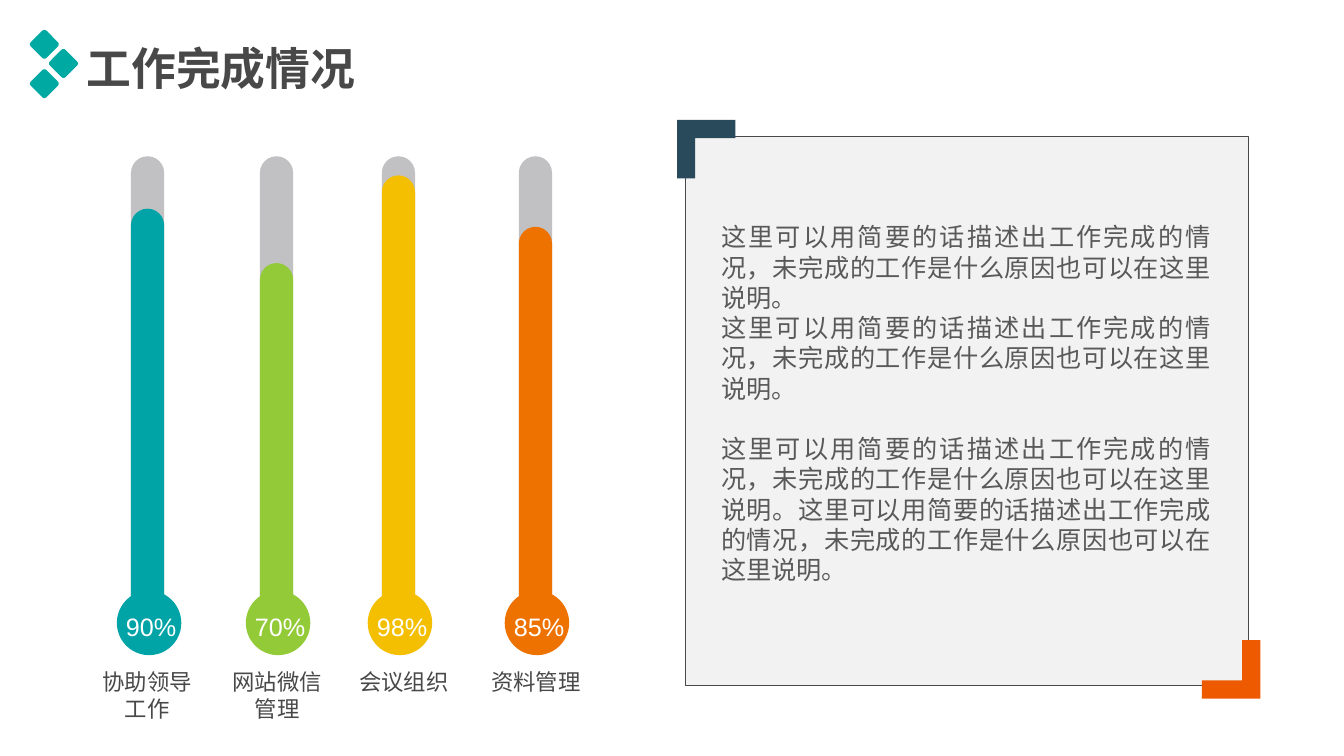
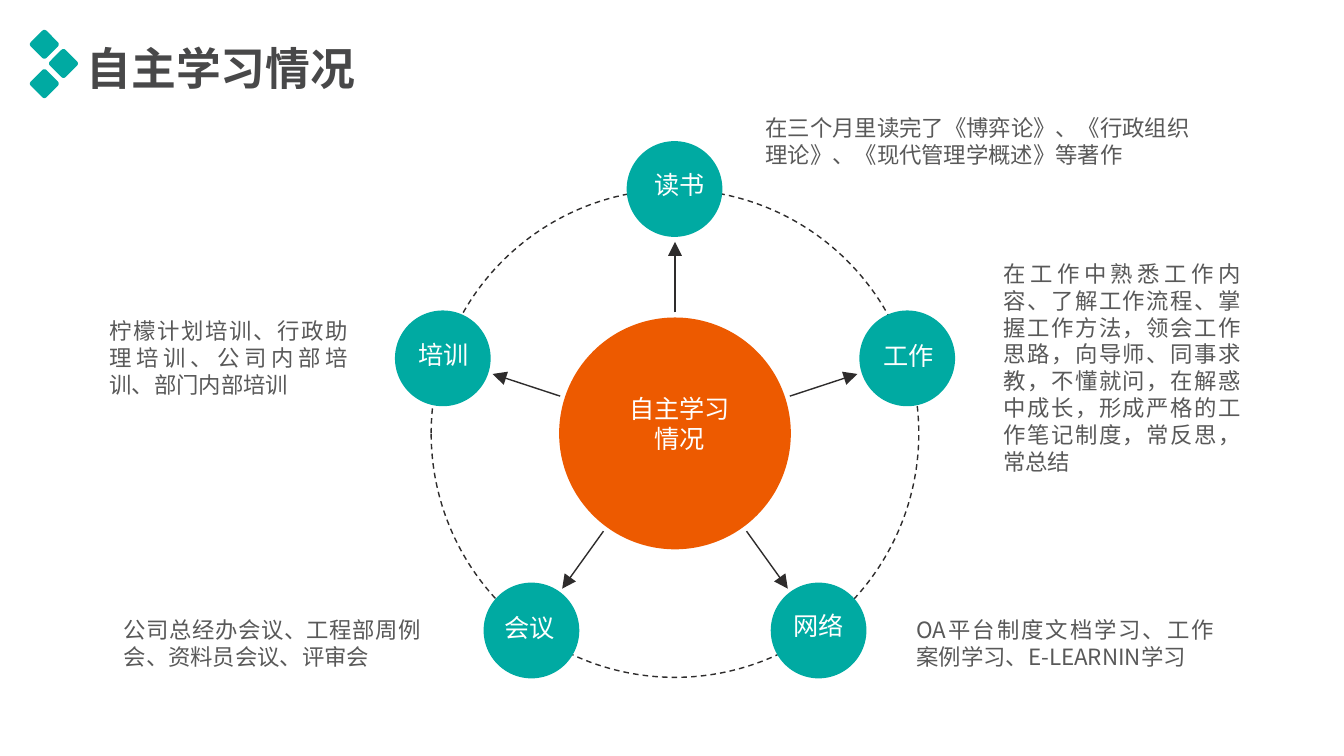
import math

from lxml import etree
from pptx import Presentation
from pptx import util as u
from pptx.dml.color import RGBColor
from pptx.enum import dml, shapes, text
from pptx.oxml.ns import qn

PX = 9144  # 100 px to the inch
FONT = "Noto Sans CJK SC"
C = {
    "teal": "00AAA2", "orange": "ED5A00", "navy": "294A5A", "dark": "484849",
    "body": "595959", "line": "2E2C2C", "panel": "F2F2F2", "tube": "C1C0C3",
    "white": "FFFFFF", "aqua": "00A3A6", "green": "93CA38",
    "yellow": "F4BF00", "amber": "ED7200",
}
KIND = shapes.MSO_SHAPE
ALIGN = text.PP_ALIGN


def put(s, kind, x, y, w, h, fill=None, line=None, width=1):
    """Add a preset shape, or a text box when kind is None."""
    box = [round(v) * PX for v in (x, y, w, h)]
    if kind is None:
        return s.shapes.add_textbox(*box)
    sp = s.shapes.add_shape(kind, *box)
    sp.shadow.inherit = False
    if fill:
        sp.fill.solid()
        sp.fill.fore_color.rgb = RGBColor.from_string(C[fill])
    else:
        sp.fill.background()
    if line:
        sp.line.color.rgb = RGBColor.from_string(C[line])
        sp.line.width = u.Pt(width)
    else:
        sp.line.fill.background()
    return sp


def write(sp, content, size, color, align, bold=False, font=FONT):
    """Fill a shape with one paragraph per line of content."""
    tf = sp.text_frame
    tf.word_wrap = True
    tf.vertical_anchor = text.MSO_ANCHOR.TOP
    tf.text = content
    for p in tf.paragraphs:
        p.alignment = align
        p.font.name = font
        p.font.size = u.Pt(size)
        p.font.bold = bold
        p.font.color.rgb = RGBColor.from_string(C[color])
        # Punctuation stays inside the right margin
        p._p.pPr.set("hangingPunct", "0")
        props = p._p.pPr.find(qn("a:defRPr"))
        props.find(qn("a:latin")).addnext(
            etree.Element(qn("a:ea"), typeface=font))
    return tf


prs = Presentation()
prs.slide_width, prs.slide_height = 1334 * PX, 750 * PX

# Shared title and diamond mark
slides = []
for title in ("工作完成情况", "自主学习情况"):
    s = prs.slides.add_slide(prs.slide_layouts[5])
    sp = s.shapes.title
    sp.left, sp.top, sp.width, sp.height = (v * PX for v in (76, 35, 654, 63))
    write(sp, title, 32, "dark", ALIGN.LEFT, bold=True)
    for x, y in ((33, 33), (52, 52), (33, 72)):
        sp = put(s, KIND.ROUNDED_RECTANGLE, x, y, 22, 22, "teal")
        sp.adjustments[0] = 0.13
        sp.rotation = 45
    slides.append(s)
progress, study = slides

# Thermometers: tube left, level top, label left, colour, value, label
TUBE_TOP, TUBE_BOTTOM = 155, 626
for x, level, label_x, color, value, label in (
    (130, 207, 90, "aqua", "90%", "协助领导工作"),
    (258, 261, 219, "green", "70%", "网站微信管理"),
    (379, 174, 345, "yellow", "98%", "会议组织"),
    (515, 225, 476, "amber", "85%", "资料管理"),
):
    for top, fill in ((TUBE_TOP, "tube"), (level, color)):
        sp = put(progress, KIND.ROUNDED_RECTANGLE,
                 x, top, 33, TUBE_BOTTOM - top, fill)
        sp.adjustments[0] = 0.5
    put(progress, KIND.OVAL, x - 14, 586, 64, 64, color)
    write(put(progress, None, x - 20, 602, 80, 40),
          value, 18, "white", ALIGN.CENTER, font="Arial")
    write(put(progress, None, label_x, 658, 112, 63),
          label, 16, "dark", ALIGN.CENTER)

# Description panel
put(progress, KIND.RECTANGLE, 680, 135, 559, 545, "panel", "dark", 0.75)
note = "这里可以用简要的话描述出工作完成的情况，未完成的工作是什么原因也可以在这里说明。"
tf = write(put(progress, None, 706, 215, 506, 370),
           "\n".join((note, note, note * 2)), 18, "body", ALIGN.JUSTIFY)
tf.paragraphs[2].space_before = u.Pt(21.6)

# Corner brackets, the second turned by half a circle
BRACKET = ((0, 0), (58, 0), (58, 18), (18, 18), (18, 58), (0, 58))
for x, y, turn, color in ((672, 119, 1, "navy"), (1251, 693, -1, "orange")):
    points = [(x + turn * dx, y + turn * dy) for dx, dy in BRACKET]
    fb = progress.shapes.build_freeform(*points[0], scale=PX)
    fb.add_line_segments(points[1:], close=True)
    sp = fb.convert_to_shape()
    sp.shadow.inherit = False
    sp.fill.solid()
    sp.fill.fore_color.rgb = RGBColor.from_string(C[color])
    sp.line.fill.background()

# Hub and dashed ring
CX, CY, RING, HUB, NODE = 670, 430, 242, 115, 95
put(study, KIND.OVAL, CX - HUB, CY - HUB, 2 * HUB, 2 * HUB, "orange")
ring = put(study, KIND.OVAL, CX - RING, CY - RING, 2 * RING, 2 * RING,
           line="line")
ring.line.dash_style = dml.MSO_LINE.DASH
write(put(study, None, 608, 385, 133, 70),
      "自主学习情况", 18, "white", ALIGN.CENTER)

# Nodes clockwise from the top: name, its place, note, its box
for i, (name, place, note, box) in enumerate((
    ("读书", (631, 163),
     "在三个月里读完了《博弈论》、《行政组织理论》、《现代管理学概述》等著作",
     (750, 108, 441, 63)),
    ("工作", (858, 333),
     "在工作中熟悉工作内容、了解工作流程、掌握工作方法，领会工作思路，"
     "向导师、同事求教，不懂就问，在解惑中成长，形成严格的工作笔记制度，"
     "常反思，常总结",
     (986, 253, 256, 223)),
    ("网络", (769, 601),
     "OA平台制度文档学习、工作案例学习、E-LEARNIN学习",
     (900, 606, 315, 63)),
    ("会议", (482, 603),
     "公司总经办会议、工程部周例会、资料员会议、评审会",
     (113, 606, 315, 63)),
    ("培训", (397, 332),
     "柠檬计划培训、行政助理培训、公司内部培训、部门内部培训",
     (99, 310, 256, 90)),
)):
    angle = math.radians(72 * i)
    dx, dy = math.sin(angle), -math.cos(angle)
    put(study, KIND.OVAL, CX + RING * dx - NODE / 2, CY + RING * dy - NODE / 2,
        NODE, NODE, "teal")
    ends = [round(c + r * d) * PX
            for r in (120, 190) for c, d in ((CX, dx), (CY, dy))]
    arrow = study.shapes.add_connector(shapes.MSO_CONNECTOR.STRAIGHT, *ends)
    arrow.line.color.rgb = RGBColor.from_string(C["line"])
    arrow.line.width = u.Pt(1)
    etree.SubElement(arrow.line._get_or_add_ln(), qn("a:tailEnd"),
                     type="triangle", w="lg", len="lg")
    etree.SubElement(arrow._element.spPr, qn("a:effectLst"))
    write(put(study, None, *place, 87, 40), name, 18, "white", ALIGN.CENTER)
    write(put(study, None, *box), note, 16, "body", ALIGN.JUSTIFY)

prs.save("out.pptx")
